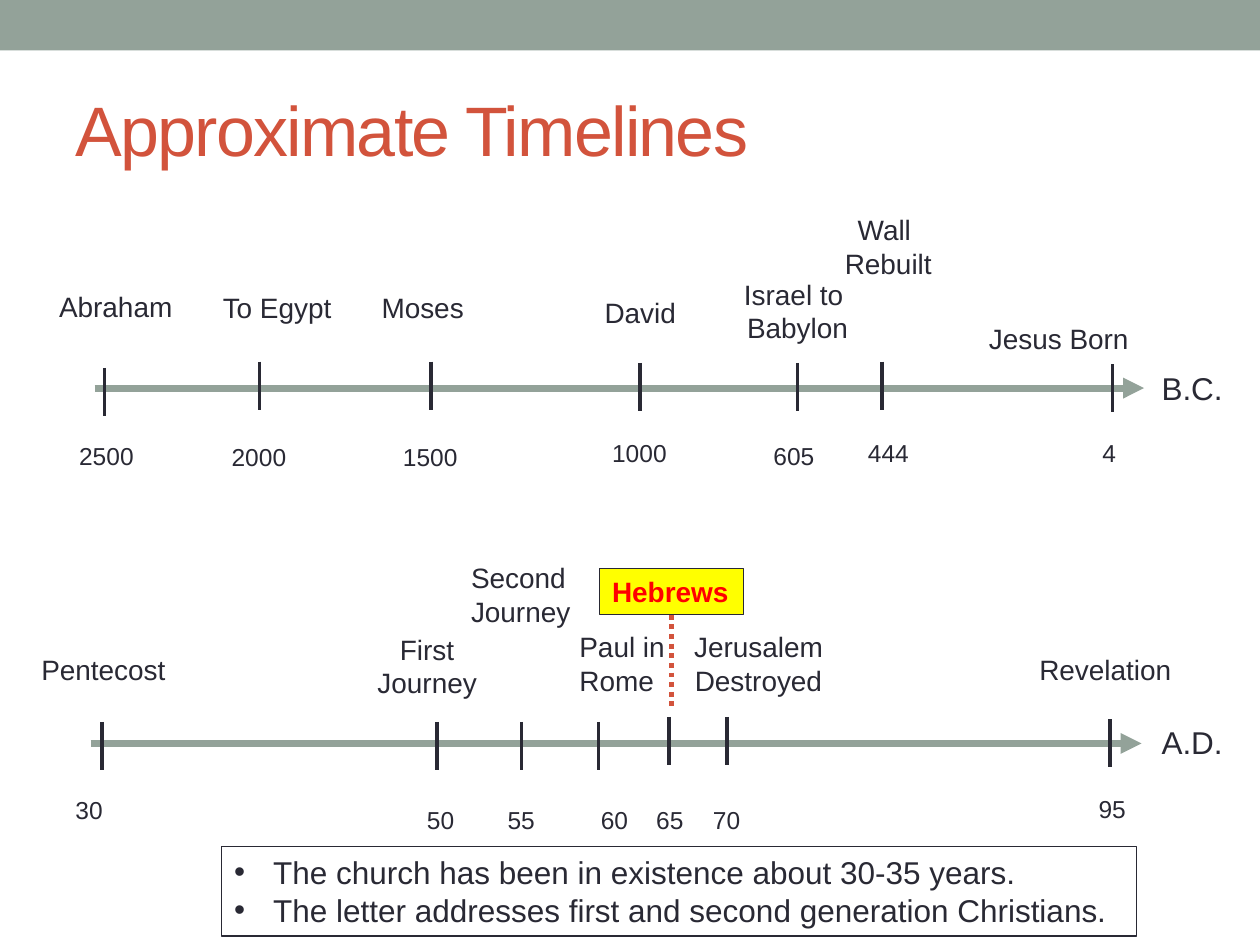
from dataclasses import dataclass
from typing import Optional

from lxml import etree
from pptx import Presentation
from pptx import util as u
from pptx.dml.color import RGBColor
from pptx.enum import dml, shapes, text
from pptx.oxml.ns import qn


@dataclass(frozen=True)
class Theme:
    font: str = "Arial"
    ink: str = "292934"
    sage: str = "93A299"
    rust: str = "D2533C"
    yellow: str = "FFFF00"
    red: str = "FF0000"
    title: int = 40
    body: int = 18
    label: int = 16
    year: int = 14
    axis_width: float = 4
    tick_width: float = 2
    dotted_width: float = 2.75
    border_width: float = 0.75


@dataclass(frozen=True)
class Event:
    label: tuple[str, ...]
    left: float
    top: float
    width: float
    tick_x: float
    tick_top: float
    year: str
    year_left: float
    year_top: float
    centered: bool = False


@dataclass(frozen=True)
class Timeline:
    era: str
    start: float
    end: float
    y: float
    era_top: float
    events: tuple[Event, ...]


THEME = Theme()
TICK_HEIGHT = 0.38
YEAR_HEIGHT = 0.34

TIMELINES = (
    Timeline("B.C.", 0.75, 9.08, 3.08, 2.88, (
        Event(("Abraham",), 0.37, 2.25, 1.11, 0.83, 2.92, "2500", 0.53, 3.45),
        Event(("To Egypt",), 1.67, 2.26, 1.07, 2.06, 2.87, "2000", 1.74, 3.46),
        Event(("Moses",), 2.93, 2.26, 0.86, 3.42, 2.87, "1500", 3.1, 3.46),
        Event(("David",), 4.7, 2.3, 0.77, 5.08, 2.88, "1000", 4.76, 3.43),
        Event(("Israel to ", "Babylon"), 5.8, 2.15, 1.06, 6.33, 2.88, "605", 6.04, 3.45, True),
        Event(("Wall ", "Rebuilt"), 6.6, 1.64, 0.9, 7, 2.87, "444", 6.79, 3.43, True),
        Event(("Jesus Born",), 7.75, 2.5, 1.32, 8.83, 2.89, "4", 8.65, 3.43),
    )),
    Timeline("A.D.", 0.72, 9.06, 5.9, 5.69, (
        Event(("Pentecost",), 0.23, 5.13, 1.2, 0.81, 5.73, "30", 0.5, 6.26),
        Event(("First", "Journey"), 2.89, 4.97, 1, 3.47, 5.73, "50", 3.29, 6.34, True),
        Event(("Second", "Journey"), 3.64, 4.4, 1, 4.14, 5.73, "55", 3.93, 6.34),
        Event(("Paul in", "Rome"), 4.5, 4.95, 0.89, 4.75, 5.73, "60", 4.67, 6.34),
        Event((), 0, 0, 0, 5.31, 5.69, "65", 5.11, 6.34),
        Event(("Jerusalem", "Destroyed"), 5.4, 4.95, 1.24, 5.77, 5.69, "70", 5.56, 6.34, True),
        Event(("Revelation",), 8.15, 5.13, 1.26, 8.81, 5.71, "95", 8.62, 6.25),
    )),
)


def color(value: str) -> RGBColor:
    return RGBColor.from_string(value)


def add_bullet(paragraph) -> None:
    properties = paragraph._p.get_or_add_pPr()
    indent = u.Inches(0.31)
    properties.set("marL", str(indent))
    properties.set("indent", str(-indent))
    etree.SubElement(properties, qn("a:buFont"), typeface=THEME.font)
    etree.SubElement(properties, qn("a:buChar"), char="•")


def write(shape, lines: tuple[str, ...], size: float, ink: str = THEME.ink,
          bold: bool = False, centered: bool = False, bullets: bool = False,
          wrap: bool = False, spacing: Optional[int] = None) -> None:
    frame = shape.text_frame
    frame.word_wrap = wrap
    for index, line in enumerate(lines):
        paragraph = frame.paragraphs[0] if index == 0 else frame.add_paragraph()
        paragraph.alignment = text.PP_ALIGN.CENTER if centered else text.PP_ALIGN.LEFT
        if bullets:
            add_bullet(paragraph)
        run = paragraph.add_run()
        run.text = line
        run.font.name = THEME.font
        run.font.size = u.Pt(size)
        run.font.bold = bold
        run.font.color.rgb = color(ink)
        if spacing is not None:
            run._r.get_or_add_rPr().set("spc", str(spacing))


def add_text(slide, left: float, top: float, width: float, height: float,
             lines: tuple[str, ...], size: float, centered: bool = False):
    shape = slide.shapes.add_textbox(*map(u.Inches, (left, top, width, height)))
    write(shape, lines, size, centered=centered)
    shape.text_frame.auto_size = text.MSO_AUTO_SIZE.SHAPE_TO_FIT_TEXT
    return shape


def add_box(slide, left: float, top: float, width: float, height: float,
            fill: Optional[str] = None, border: Optional[str] = None):
    shape = slide.shapes.add_shape(
        shapes.MSO_SHAPE.RECTANGLE, *map(u.Inches, (left, top, width, height)))
    shape.shadow.inherit = False
    if fill:
        shape.fill.solid()
        shape.fill.fore_color.rgb = color(fill)
    else:
        shape.fill.background()
    if border:
        shape.line.color.rgb = color(border)
        shape.line.width = u.Pt(THEME.border_width)
    else:
        shape.line.fill.background()
    shape.text_frame.vertical_anchor = text.MSO_ANCHOR.TOP
    return shape


def add_line(slide, x1: float, y1: float, x2: float, y2: float,
             ink: str, width: float, arrow: bool = False):
    connector = slide.shapes.add_connector(
        shapes.MSO_CONNECTOR.STRAIGHT, *map(u.Inches, (x1, y1, x2, y2)))
    connector.line.color.rgb = color(ink)
    connector.line.width = u.Pt(width)
    if arrow:
        etree.SubElement(connector.line._get_or_add_ln(), qn("a:tailEnd"), type="triangle")
    etree.SubElement(connector._element.spPr, qn("a:effectLst"))
    return connector


def draw_event(slide, event: Event) -> None:
    if event.label:
        height = 0.37 if len(event.label) == 1 else 0.64
        add_text(slide, event.left, event.top, event.width, height,
                 event.label, THEME.label, event.centered)
    add_line(slide, event.tick_x, event.tick_top, event.tick_x,
             event.tick_top + TICK_HEIGHT, THEME.ink, THEME.tick_width)
    year_width = 0.2 + 0.11 * len(event.year)
    add_text(slide, event.year_left, event.year_top, year_width, YEAR_HEIGHT,
             (event.year,), THEME.year)


def draw_timeline(slide, timeline: Timeline) -> None:
    add_line(slide, timeline.start, timeline.y, timeline.end, timeline.y,
             THEME.sage, THEME.axis_width, arrow=True)
    for event in timeline.events:
        draw_event(slide, event)
    add_text(slide, 9.12, timeline.era_top, 0.69, 0.4, (timeline.era,), THEME.body)


def main() -> None:
    presentation = Presentation()
    presentation.slide_width = u.Inches(10)
    presentation.slide_height = u.Inches(7.5)
    slide = presentation.slides.add_slide(presentation.slide_layouts[6])

    add_box(slide, 0, 0, 10, 0.4, THEME.sage)
    title = slide.shapes.add_textbox(*map(u.Inches, (0.5, 0.58, 9, 0.88)))
    title.text_frame.vertical_anchor = text.MSO_ANCHOR.MIDDLE
    write(title, ("Approximate Timelines",), THEME.title, THEME.rust, wrap=True, spacing=-100)

    for timeline in TIMELINES:
        draw_timeline(slide, timeline)

    hebrews = add_box(slide, 4.76, 4.51, 1.14, 0.37, THEME.yellow, THEME.ink)
    write(hebrews, ("Hebrews",), THEME.label, THEME.red, bold=True)
    dotted = add_line(slide, 5.33, 4.88, 5.33, 5.61, THEME.rust, THEME.dotted_width)
    dotted.line.dash_style = dml.MSO_LINE.ROUND_DOT
    dotted.begin_connect(hebrews, 2)

    summary = add_box(slide, 1.76, 6.72, 7.26, 0.71, border=THEME.ink)
    write(summary, ("The church has been in existence about 30-35 years.",
                    "The letter addresses first and second generation Christians."),
          THEME.body, bullets=True)

    presentation.save("out.pptx")


if __name__ == "__main__":
    main()
